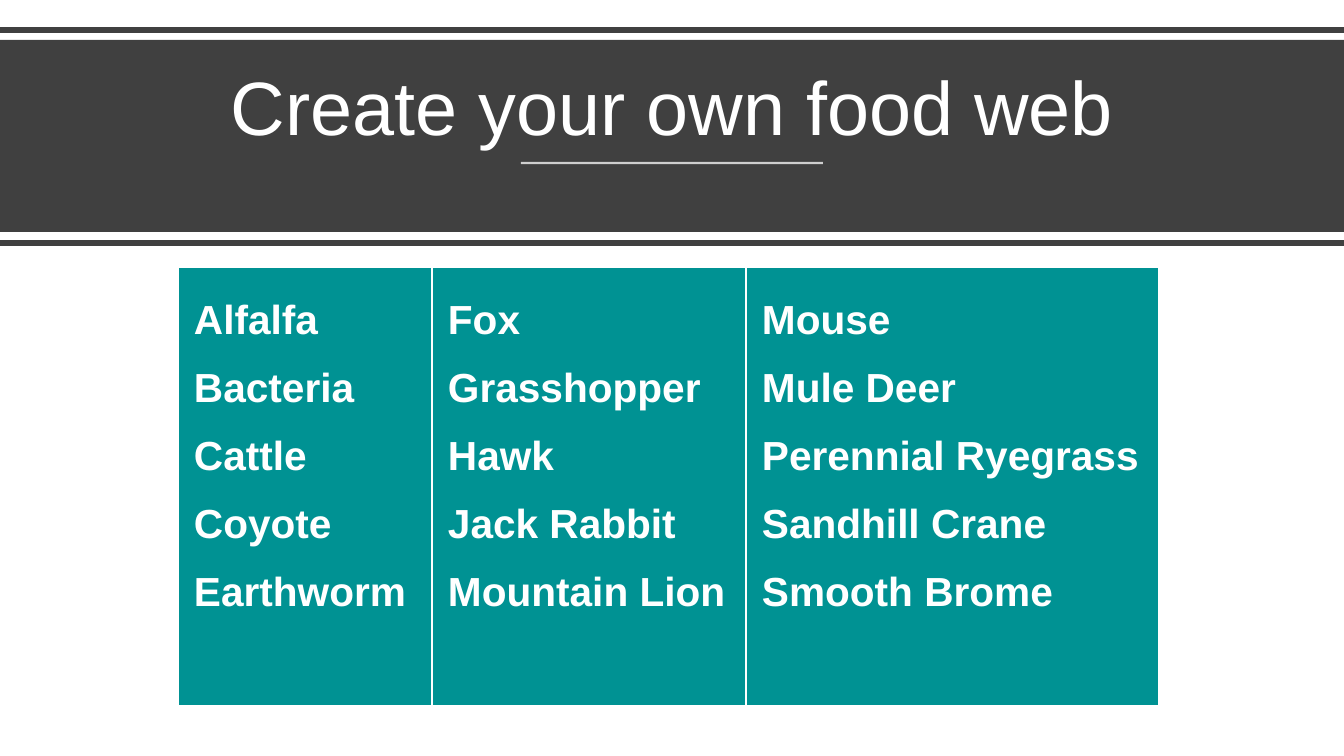
from lxml import etree
from pptx import Presentation
from pptx.dml.color import RGBColor
from pptx.enum.shapes import MSO_CONNECTOR, MSO_SHAPE
from pptx.enum.text import MSO_ANCHOR, MSO_AUTO_SIZE, PP_ALIGN
from pptx.oxml.ns import qn
from pptx.util import Pt

STRAIGHT = MSO_CONNECTOR.STRAIGHT
RECTANGLE = MSO_SHAPE.RECTANGLE
BOTTOM = MSO_ANCHOR.BOTTOM
NO_AUTOFIT = MSO_AUTO_SIZE.NONE
CENTER = PP_ALIGN.CENTER
WHITE = RGBColor(0xFF, 0xFF, 0xFF)
CHARCOAL = RGBColor(0x40, 0x40, 0x40)
TEAL = RGBColor(0x00, 0x92, 0x93)
FONT = "Arial"

TITLE = "Create your own food web"
ORGANISMS = [
    (254, ["Alfalfa", "Bacteria", "Cattle", "Coyote", "Earthworm"]),
    (314, ["Fox", "Grasshopper", "Hawk", "Jack Rabbit", "Mountain Lion"]),
    (413, ["Mouse", "Mule Deer", "Perennial Ryegrass", "Sandhill Crane", "Smooth Brome"]),
]
BORDERS = {"a:lnL": 1, "a:lnR": 1, "a:lnT": 1, "a:lnB": 3}
SLIDE_WIDTH, SLIDE_HEIGHT = 1344, 756
TABLE_LEFT, TABLE_TOP, TABLE_HEIGHT = 178, 267, 440
UNDERLINE_WIDTH = 302


def px(length):
    return round(length * 914400 / 100.8)


def style_font(paragraph, size):
    paragraph.font.name = FONT
    paragraph.font.size = Pt(size)
    paragraph.font.color.rgb = WHITE


def add_rule(slide, left, right, y, color, weight):
    rule = slide.shapes.add_connector(STRAIGHT, px(left), px(y), px(right), px(y))
    rule.line.color.rgb = color
    rule.line.width = Pt(weight)
    etree.SubElement(rule._element.spPr, qn("a:effectLst"))
    return rule


def add_border(cell, side, weight):
    properties = cell._tc.get_or_add_tcPr()
    border = etree.SubElement(properties, qn(side), w=str(Pt(weight)))
    fill = etree.SubElement(border, qn("a:solidFill"))
    etree.SubElement(fill, qn("a:srgbClr"), val=str(WHITE))


def fill_cell(cell, names):
    cell.margin_left = cell.margin_right = px(16)
    cell.margin_top = cell.margin_bottom = px(8)
    for side, weight in BORDERS.items():
        add_border(cell, side, weight)
    cell.fill.solid()
    cell.fill.fore_color.rgb = TEAL
    cell.text = "\n".join(names)
    for paragraph in cell.text_frame.paragraphs:
        paragraph.line_spacing = 1.5
        style_font(paragraph, 29)
        paragraph.font.bold = True


def add_organism_table(slide):
    width = sum(column_width for column_width, names in ORGANISMS)
    table = slide.shapes.add_table(
        1, len(ORGANISMS), px(TABLE_LEFT), px(TABLE_TOP), px(width), px(TABLE_HEIGHT)
    ).table
    for index, (column_width, names) in enumerate(ORGANISMS):
        table.columns[index].width = px(column_width)
        fill_cell(table.cell(0, index), names)


def place_title(slide):
    title = slide.shapes.title
    title.left, title.top, title.width, title.height = px(58), px(54), px(1228), px(103)
    frame = title.text_frame
    frame.text = TITLE
    frame.word_wrap = True
    frame.auto_size = NO_AUTOFIT
    frame.vertical_anchor = BOTTOM
    paragraph = frame.paragraphs[0]
    paragraph.alignment = CENTER
    paragraph.line_spacing = 0.9
    style_font(paragraph, 54)


def add_banner(slide):
    banner = slide.shapes.add_shape(RECTANGLE, 0, px(40), px(SLIDE_WIDTH), px(192))
    banner.shadow.inherit = False
    banner.fill.solid()
    banner.fill.fore_color.rgb = CHARCOAL
    banner.line.fill.background()
    slide.shapes._spTree.insert(2, banner._element)
    for y in (30, 243):
        add_rule(slide, 0, SLIDE_WIDTH, y, CHARCOAL, 4)
    left = (SLIDE_WIDTH - UNDERLINE_WIDTH) / 2
    underline = add_rule(slide, left, left + UNDERLINE_WIDTH, 163, WHITE, 1.5)
    color = underline._element.spPr.find(".//" + qn("a:srgbClr"))
    etree.SubElement(color, qn("a:alpha"), val="75000")


def main():
    presentation = Presentation()
    presentation.slide_width = px(SLIDE_WIDTH)
    presentation.slide_height = px(SLIDE_HEIGHT)
    slide = presentation.slides.add_slide(presentation.slide_layouts[5])
    place_title(slide)
    add_banner(slide)
    add_organism_table(slide)
    presentation.save("out.pptx")


if __name__ == "__main__":
    main()
